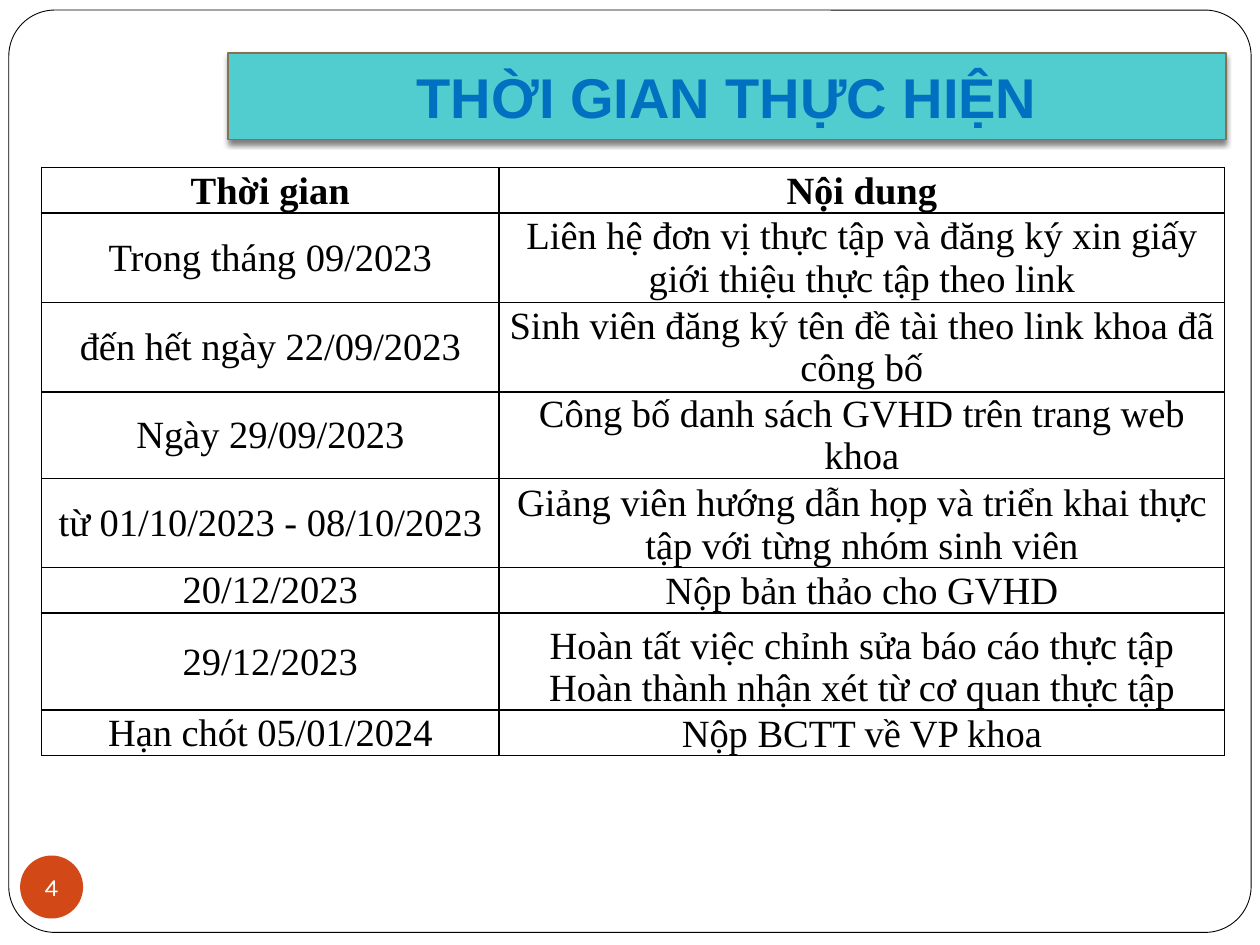
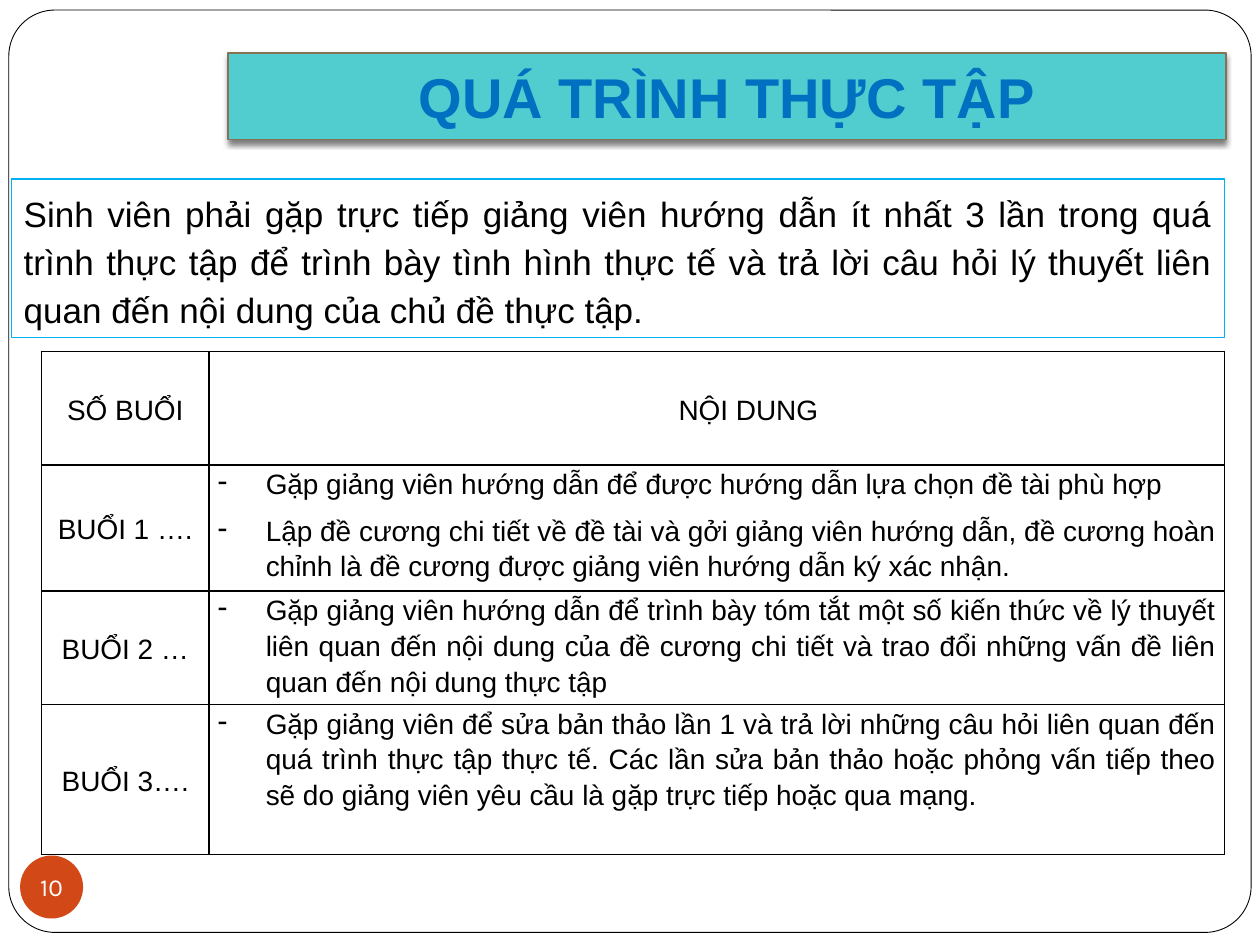
from lxml.etree import SubElement
from pptx import Presentation
from pptx.dml.color import RGBColor
from pptx.enum.shapes import MSO_SHAPE
from pptx.enum.text import MSO_ANCHOR, PP_ALIGN
from pptx.oxml import parse_xml
from pptx.oxml.ns import nsdecls, qn
from pptx.util import Inches, Pt

BLACK, WHITE = "000000", "FFFFFF"
BAND, EDGE, TITLE = "51CCCF", "847253", "0070C0"
BADGE, FRAME = "D34817", "00B0F0"
CENTER, JUSTIFY = PP_ALIGN.CENTER, PP_ALIGN.JUSTIFY
TOP, MIDDLE, BOTTOM = MSO_ANCHOR.TOP, MSO_ANCHOR.MIDDLE, MSO_ANCHOR.BOTTOM

DATES = [
    ("Thời gian", "Nội dung"),
    ("Trong tháng 09/2023",
     "Liên hệ đơn vị thực tập và đăng ký xin giấy giới thiệu thực tập theo link"),
    ("đến hết ngày 22/09/2023",
     "Sinh viên đăng ký tên đề tài theo link khoa đã công bố"),
    ("Ngày 29/09/2023", "Công bố danh sách GVHD trên trang web khoa"),
    ("từ 01/10/2023 - 08/10/2023",
     "Giảng viên hướng dẫn họp và triển khai thực tập với từng nhóm sinh viên"),
    ("20/12/2023", "Nộp bản thảo cho GVHD"),
    ("29/12/2023",
     "Hoàn tất việc chỉnh sửa báo cáo thực tập\v"
     "Hoàn thành nhận xét từ cơ quan thực tập"),
    ("Hạn chót 05/01/2024", "Nộp BCTT về VP khoa"),
]
INTRO = (
    "Sinh viên phải gặp trực tiếp giảng viên hướng dẫn ít nhất 3 lần trong quá "
    "trình thực tập để trình bày tình hình thực tế và trả lời câu hỏi lý thuyết "
    "liên quan đến nội dung của chủ đề thực tập."
)
STEPS = [
    ("SỐ BUỔI", "NỘI DUNG"),
    ("BUỔI 1 ….",
     "Gặp giảng viên hướng dẫn để được hướng dẫn lựa chọn đề tài phù hợp\n"
     "Lập đề cương chi tiết về đề tài và gởi giảng viên hướng dẫn, đề cương "
     "hoàn chỉnh là đề cương được giảng viên hướng dẫn ký xác nhận."),
    ("BUỔI 2 …",
     "Gặp giảng viên hướng dẫn để trình bày tóm tắt một số kiến thức về lý thuyết "
     "liên quan đến nội dung của đề cương chi tiết và trao đổi những vấn đề liên "
     "quan đến nội dung thực tập"),
    ("BUỔI 3….",
     "Gặp giảng viên để sửa bản thảo lần 1 và trả lời những câu hỏi liên quan đến "
     "quá trình thực tập thực tế. Các lần sửa bản thảo hoặc phỏng vấn tiếp theo "
     "sẽ do giảng viên yêu cầu là gặp trực tiếp hoặc qua mạng."),
]


def color(code):
    """Turn a hex string into a colour."""
    return RGBColor.from_string(code)


def add_box(slide, kind, area, fill=None, line=None, width=0.75):
    """Add a preset shape without shadow."""
    box = slide.shapes.add_shape(kind, *map(Inches, area))
    box.shadow.inherit = False
    if fill:
        box.fill.solid()
        box.fill.fore_color.rgb = color(fill)
    else:
        box.fill.background()
    if line:
        box.line.color.rgb = color(line)
        box.line.width = Pt(width)
    else:
        box.line.fill.background()
    return box


def write(frame, text, font, size, ink=BLACK, bold=False, align=CENTER, space=None):
    """Fill a text frame and format all its paragraphs."""
    frame.text = text
    for i, par in enumerate(frame.paragraphs):
        par.alignment = align
        if space:
            par.line_spacing = space
        if i:
            par.space_before = Pt(6)
        for run in par.runs:
            run.font.name, run.font.size = font, Pt(size)
            run.font.bold = bold
            run.font.color.rgb = color(ink)


def indent(frame, left, dash=False):
    """Indent paragraphs, with a hanging dash if asked."""
    for par in frame.paragraphs:
        props = par._p.get_or_add_pPr()
        props.set("marL", str(Inches(left)))
        props.set("indent", str(-Inches(left) if dash else 0))
        if dash:
            SubElement(props, qn("a:buChar")).set("char", "-")


def add_shade(shape):
    """Drop a soft black shadow below a shape."""
    props = shape._element.spPr
    props.remove(props.find(qn("a:effectLst")))
    props.append(parse_xml(
        f'<a:effectLst {nsdecls("a")}><a:outerShdw blurRad="{Pt(3)}" dist="{Pt(2)}" '
        'dir="5400000" rotWithShape="0"><a:srgbClr val="000000">'
        '<a:alpha val="50000"/></a:srgbClr></a:outerShdw></a:effectLst>'))


def add_edges(cell):
    """Draw thin black lines around a cell."""
    props = cell._tc.get_or_add_tcPr()
    for i, side in enumerate("LRTB"):
        props.insert(i, parse_xml(
            f'<a:ln{side} {nsdecls("a")} w="{Pt(1)}"><a:solidFill>'
            f'<a:srgbClr val="{BLACK}"/></a:solidFill></a:ln{side}>'))


def add_grid(slide, top, cols, rows, margins):
    """Add an unfilled, ruled table and return it."""
    frame = slide.shapes.add_table(
        len(rows), len(cols), Inches(0.33), Inches(top),
        Inches(sum(cols)), Inches(sum(rows)))
    table = frame.table
    table.first_row = table.horz_banding = False
    for col, width in zip(table.columns, cols):
        col.width = Inches(width)
    for row, height in zip(table.rows, rows):
        row.height = Inches(height)
    for cell in table.iter_cells():
        cell.fill.background()
        add_edges(cell)
        (cell.margin_left, cell.margin_top,
         cell.margin_right, cell.margin_bottom) = map(Inches, margins)
    return table


def add_page(deck, title, number):
    """Add a slide with its frame, number badge and title band."""
    slide = deck.slides.add_slide(deck.slide_layouts[6])
    frame = add_box(slide, MSO_SHAPE.ROUNDED_RECTANGLE,
                    (0.07, 0.08, 9.86, 7.32), WHITE, BLACK, 0.5)
    frame.adjustments[0] = 0.05
    badge = add_box(slide, MSO_SHAPE.OVAL, (0.16, 6.79, 0.5, 0.5), BADGE)
    text = badge.text_frame
    text.margin_left = text.margin_right = text.margin_top = text.margin_bottom = 0
    text.word_wrap = False
    write(text, str(number), "Karla", 14, WHITE)
    band = add_box(slide, MSO_SHAPE.RECTANGLE, (1.81, 0.42, 7.92, 0.69), BAND, EDGE)
    add_shade(band)
    write(band.text_frame, title, "Arial", 32, TITLE, True)
    return slide


def add_dates(slide):
    """Add the timetable."""
    rows = [0.36, 0.71, 0.71, 0.36, 0.71, 0.36, 0.77, 0.36]
    table = add_grid(slide, 1.33, [3.63, 5.76], rows, (0.01, 0.01, 0.01, 0))
    for r, pair in enumerate(DATES):
        for c, text in enumerate(pair):
            cell = table.cell(r, c)
            write(cell.text_frame, text, "Times New Roman", 22, bold=r == 0)
            low = r == 0 or (c == 1 and r > 2)
            cell.vertical_anchor = BOTTOM if low else MIDDLE


def add_steps(slide):
    """Add the table of meetings."""
    table = add_grid(slide, 2.79, [1.33, 8.06], [0.9, 1, 0.9, 1.19], (0.07, 0, 0.07, 0))
    for r, pair in enumerate(STEPS):
        for c, text in enumerate(pair):
            cell = table.cell(r, c)
            listed = r > 0 and c == 1
            write(cell.text_frame, text, "Arial", 16,
                  align=JUSTIFY if listed else CENTER, space=1.15)
            cell.vertical_anchor = TOP if listed else MIDDLE
            if c == 1:
                indent(cell.text_frame, 0.38 if listed else 0.5, listed)


def main():
    """Build and save the deck."""
    deck = Presentation()
    deck.slide_width, deck.slide_height = Inches(10), Inches(7.5)
    add_dates(add_page(deck, "THỜI GIAN THỰC HIỆN", 4))
    slide = add_page(deck, "QUÁ TRÌNH THỰC TẬP", 10)
    intro = add_box(slide, MSO_SHAPE.RECTANGLE, (0.09, 1.42, 9.63, 1.26), line=FRAME)
    write(intro.text_frame, INTRO, "Arial", 20, align=JUSTIFY, space=1.15)
    add_steps(slide)
    deck.save("out.pptx")


if __name__ == "__main__":
    main()
